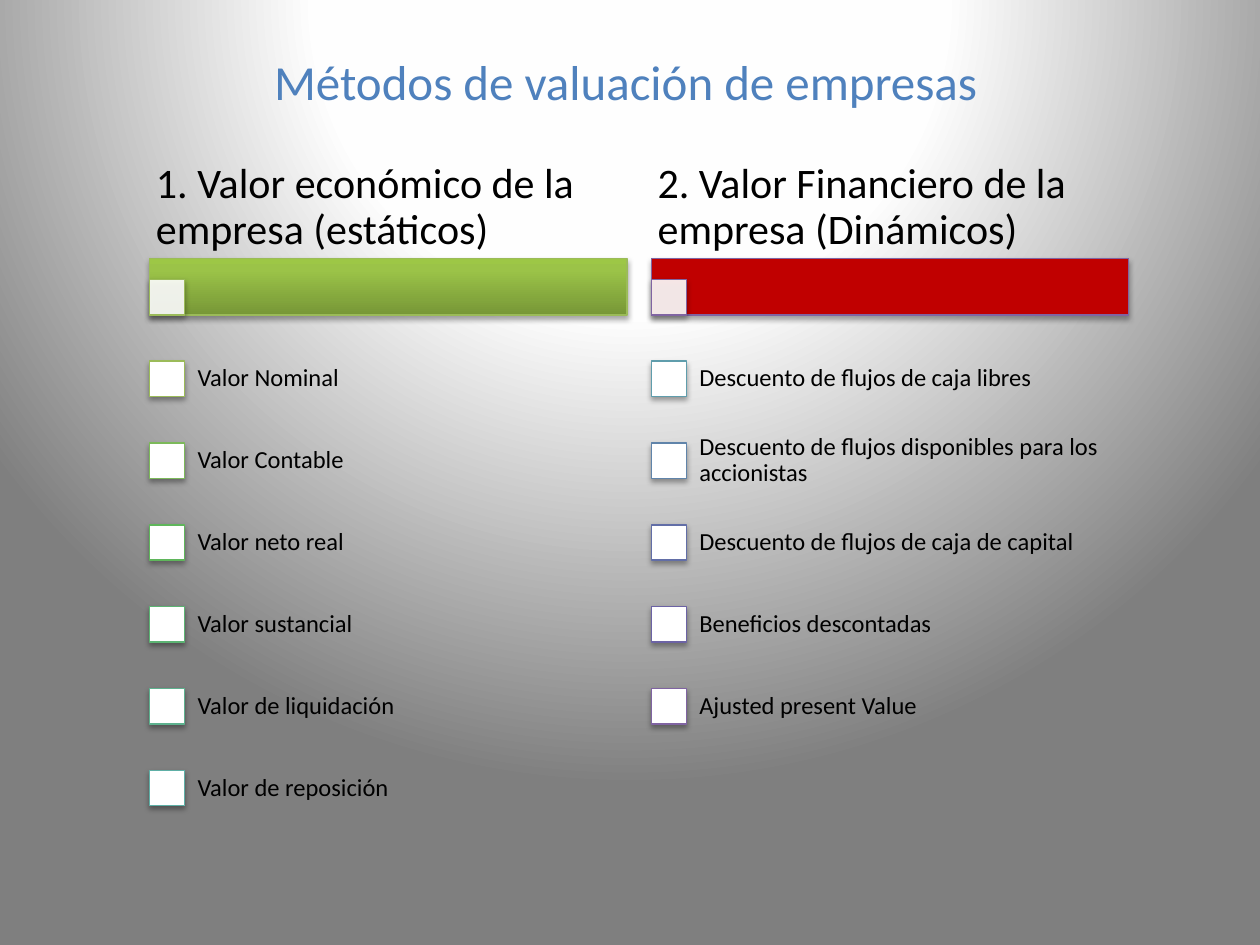
"""Builds a slide that lists company valuation methods in two columns."""
from pptx import Presentation
from pptx.dml.color import RGBColor
from pptx.enum.shapes import MSO_SHAPE
from pptx.enum.text import MSO_ANCHOR, PP_ALIGN
from pptx.oxml import parse_xml
from pptx.oxml.ns import nsdecls, qn
from pptx.util import Pt

RECT = MSO_SHAPE.RECTANGLE
TOP, MIDDLE = MSO_ANCHOR.TOP, MSO_ANCHOR.MIDDLE
LEFT, CENTER = PP_ALIGN.LEFT, PP_ALIGN.CENTER

FONT = "Calibri"
BLACK = RGBColor(0x00, 0x00, 0x00)
WHITE = RGBColor(0xFF, 0xFF, 0xFF)
BLUE = RGBColor(0x4F, 0x81, 0xBD)
RED = RGBColor(0xC0, 0x00, 0x00)
GREEN = RGBColor(0x9B, 0xBB, 0x59)
LEAF = RGBColor(0x7C, 0xB9, 0x5A)
GRASS = RGBColor(0x5F, 0xB6, 0x5B)
MINT = RGBColor(0x5C, 0xB4, 0x73)
JADE = RGBColor(0x5D, 0xB1, 0x8E)
TEAL = RGBColor(0x5E, 0xAF, 0xA6)
CYAN = RGBColor(0x5F, 0x9D, 0xAC)
STEEL = RGBColor(0x60, 0x84, 0xAA)
INDIGO = RGBColor(0x62, 0x6E, 0xA7)
VIOLET = RGBColor(0x6C, 0x63, 0xA5)
PURPLE = RGBColor(0x80, 0x64, 0xA2)
PALE = RGBColor(0xFE, 0xFE, 0xFE)
GRAY = RGBColor(0x7F, 0x7F, 0x7F)
BAR_GREENS = [(0, RGBColor(0x77, 0x97, 0x37)),
              (80, RGBColor(0x9B, 0xC3, 0x48)),
              (100, RGBColor(0x9D, 0xC7, 0x46))]

UPWARD = '<a:lin ang="16200000" scaled="0"/>'
RADIAL = ('<a:path path="circle"><a:fillToRect l="50000" t="-80000" '
          'r="50000" b="180000"/></a:path>')

COLUMN_W, BAR_Y, BAR_H = 272.9, 147.6, 32.4
HEADING_Y, HEADING_H = 90, 57.6
CHECK, CHECK_INDENT = 20.16, 19.5
ROWS_Y, ROW_H = 193, 46.8

COLUMNS = [
    (85.5, "1. Valor económico de la empresa (estáticos)", BAR_GREENS, GREEN, [
        ("Valor Nominal", GREEN),
        ("Valor Contable", LEAF),
        ("Valor neto real", GRASS),
        ("Valor sustancial", MINT),
        ("Valor de liquidación", JADE),
        ("Valor de reposición", TEAL),
    ]),
    (372.2, "2. Valor Financiero de la empresa (Dinámicos)", RED, PURPLE, [
        ("Descuento de flujos de caja libres", CYAN),
        ("Descuento de flujos disponibles para los accionistas", STEEL),
        ("Descuento de flujos de caja de capital", INDIGO),
        ("Beneficios descontadas", VIOLET),
        ("Ajusted present Value", PURPLE),
    ]),
]


def set_gradient(fill, element, stops, direction):
    """Give the fill inside element a gradient with these stops."""
    fill.gradient()
    grad = element.find(".//" + qn("a:gradFill"))
    marks = "".join(f'<a:gs pos="{pos * 1000}"><a:srgbClr val="{color}"/></a:gs>'
                    for pos, color in stops)
    grad.getparent().replace(grad, parse_xml(
        f'<a:gradFill {nsdecls("a")} rotWithShape="1">'
        f'<a:gsLst>{marks}</a:gsLst>{direction}</a:gradFill>'))


def add_text(s, text, x, y, w, h, *, size, color=BLACK, align=LEFT,
             anchor=MIDDLE, inset=(7.2, 3.6), spacing=0.9):
    """Add a wrapped text box with one formatted paragraph."""
    tf = s.shapes.add_textbox(Pt(x), Pt(y), Pt(w), Pt(h)).text_frame
    tf.word_wrap = True
    tf.vertical_anchor = anchor
    tf.margin_left = tf.margin_right = Pt(inset[0])
    tf.margin_top = tf.margin_bottom = Pt(inset[1])
    p = tf.paragraphs[0]
    p.alignment = align
    p.line_spacing = spacing
    r = p.add_run()
    r.text = text
    r.font.name = FONT
    r.font.size = Pt(size)
    r.font.color.rgb = color


def add_box(s, x, y, w, h, fill, line, alpha=100):
    """Add an outlined rectangle with a soft shadow below it."""
    sp = s.shapes.add_shape(RECT, Pt(x), Pt(y), Pt(w), Pt(h))
    sp.line.color.rgb = line
    sp.line.width = Pt(0.75)
    spPr = sp._element.spPr
    if isinstance(fill, list):
        set_gradient(sp.fill, spPr, fill, UPWARD)
    else:
        sp.fill.solid()
        sp.fill.fore_color.rgb = fill
        if alpha < 100:
            clr = spPr.find(qn("a:solidFill")).find(qn("a:srgbClr"))
            clr.append(parse_xml(f'<a:alpha {nsdecls("a")} val="{alpha * 1000}"/>'))
    sp.shadow.inherit = False
    spPr.find(qn("a:effectLst")).append(parse_xml(
        f'<a:outerShdw {nsdecls("a")} blurRad="{Pt(3.1)}" dist="{Pt(1.8)}" '
        'dir="5400000" rotWithShape="0"><a:srgbClr val="000000">'
        '<a:alpha val="35000"/></a:srgbClr></a:outerShdw>'))


def add_column(s, x, heading, fill, line, items):
    """Add a heading, its bar and the list of checked items."""
    add_box(s, x, BAR_Y, COLUMN_W, BAR_H, fill, line)
    add_box(s, x, BAR_Y + BAR_H - CHECK, CHECK, CHECK, WHITE, line, alpha=90)
    add_text(s, heading, x, HEADING_Y, COLUMN_W, HEADING_H, size=24,
             inset=(3.6, 2.4))
    for i, (text, color) in enumerate(items):
        y = ROWS_Y + i * ROW_H
        add_box(s, x, y + (ROW_H - CHECK) / 2, CHECK, CHECK, WHITE, color)
        add_text(s, text, x + CHECK_INDENT, y, COLUMN_W - CHECK_INDENT, ROW_H,
                 size=14, inset=(7.9, 7.9))


def main():
    """Build the slide and save it."""
    prs = Presentation()
    prs.slide_width, prs.slide_height = Pt(720), Pt(540)
    s = prs.slides.add_slide(prs.slide_layouts[6])
    set_gradient(s.background.fill, s._element, [(40, PALE), (100, GRAY)], RADIAL)
    add_text(s, "Métodos de valuación de empresas", 54, 26, 607, 41, size=28,
             color=BLUE, align=CENTER, anchor=TOP, spacing=1.0)
    for column in COLUMNS:
        add_column(s, *column)
    prs.save("out.pptx")


if __name__ == "__main__":
    main()
